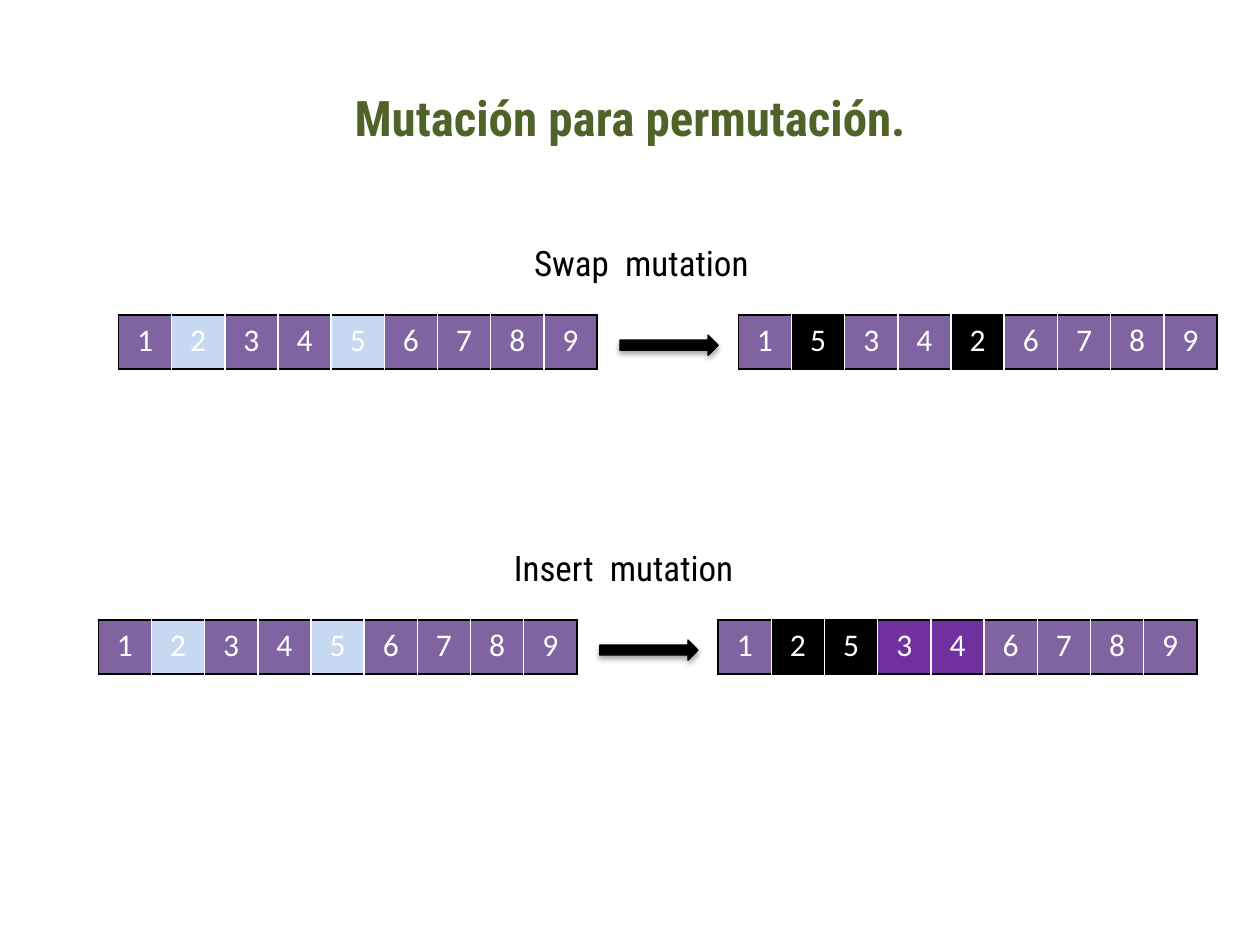
"""Build a slide showing swap and insert mutation of permutations."""
from dataclasses import dataclass

from lxml import etree
from pptx import Presentation
from pptx.dml.color import RGBColor
from pptx.enum.shapes import MSO_SHAPE
from pptx.enum.text import MSO_ANCHOR, MSO_AUTO_SIZE, PP_ALIGN
from pptx.oxml.ns import qn
from pptx.util import Inches, Pt

CENTER = PP_ALIGN.CENTER
MIDDLE = MSO_ANCHOR.MIDDLE
GROW = MSO_AUTO_SIZE.SHAPE_TO_FIT_TEXT
RIGHT_ARROW = MSO_SHAPE.RIGHT_ARROW
TITLE_ONLY = 5


@dataclass(frozen=True)
class Theme:
    heading_font: str = "Roboto Condensed"
    gene_font: str = "Calibri"
    title_size: float = 28
    label_size: float = 20
    gene_size: float = 18
    border_width: float = 1
    title: str = "4F6228"
    black: str = "000000"
    white: str = "FFFFFF"
    gene: str = "8064A2"
    selected: str = "C6D9F1"
    shifted: str = "7030A0"


@dataclass(frozen=True)
class Mutation:
    label: str
    left: float
    top: float
    result: str
    result_fills: dict[str, str]


THEME = Theme()
PARENT = "123456789"
PARENT_FILLS = dict.fromkeys("25", THEME.selected)
MOVED = dict.fromkeys("25", THEME.black)
MUTATIONS = [
    Mutation("Swap  mutation", 0.94, 2.5, "153426789", MOVED),
    Mutation("Insert  mutation", 0.78, 4.92, "125346789",
             MOVED | dict.fromkeys("34", THEME.shifted)),
]
TABLE_WIDTH, TABLE_HEIGHT = 3.8, 0.43
RESULT_OFFSET = 4.92
ARROW_OFFSET = (3.98, 0.16)
LABEL_OFFSET = (3.2, -0.63)


def style_text(p, font: str, size: float, color: str, bold: bool = False) -> None:
    for r in p.runs:
        r.font.name = font
        r.font.size = Pt(size)
        r.font.bold = bold
        r.font.color.rgb = RGBColor.from_string(color)


def add_color(parent, color: str):
    return etree.SubElement(parent, qn("a:srgbClr"), val=color)


def set_borders(cell, left: str, right: str) -> None:
    tc_pr = cell._tc.get_or_add_tcPr()
    sides = {"L": left, "R": right, "T": THEME.black, "B": THEME.black}
    for side, color in sides.items():
        ln = etree.SubElement(tc_pr, qn(f"a:ln{side}"), w=str(Pt(THEME.border_width)))
        add_color(etree.SubElement(ln, qn("a:solidFill")), color)


def add_chromosome(s, left: float, top: float, genes: str, fills: dict[str, str]) -> None:
    table = s.shapes.add_table(1, len(genes), Inches(left), Inches(top),
                               Inches(TABLE_WIDTH), Inches(TABLE_HEIGHT)).table
    last = len(genes) - 1
    for i, gene in enumerate(genes):
        table.columns[i].width = Inches(TABLE_WIDTH / len(genes))
        cell = table.cell(0, i)
        set_borders(cell, THEME.black if i == 0 else THEME.white,
                    THEME.black if i == last else THEME.white)
        cell.fill.solid()
        cell.fill.fore_color.rgb = RGBColor.from_string(fills.get(gene, THEME.gene))
        cell.text_frame.text = gene
        p = cell.text_frame.paragraphs[0]
        p.alignment = CENTER
        style_text(p, THEME.gene_font, THEME.gene_size, THEME.white)


def add_arrow(s, left: float, top: float) -> None:
    sp = s.shapes.add_shape(RIGHT_ARROW, Inches(left), Inches(top),
                            Inches(0.78), Inches(0.16))
    sp.fill.solid()
    sp.fill.fore_color.rgb = RGBColor.from_string(THEME.black)
    sp.line.color.rgb = RGBColor.from_string(THEME.black)
    sp.line.width = Pt(0.75)
    sp.shadow.inherit = False
    effects = sp._element.spPr.find(qn("a:effectLst"))
    shadow = etree.SubElement(effects, qn("a:outerShdw"), blurRad=str(Pt(3.1)),
                              dist=str(Pt(1.8)), dir="5400000", rotWithShape="0")
    etree.SubElement(add_color(shadow, THEME.black), qn("a:alpha"), val="35000")


def add_label(s, left: float, top: float, text: str) -> None:
    tf = s.shapes.add_textbox(Inches(left), Inches(top),
                              Inches(2.73), Inches(0.44)).text_frame
    tf.word_wrap = True
    tf.auto_size = GROW
    tf.text = text
    style_text(tf.paragraphs[0], THEME.heading_font, THEME.label_size, THEME.black)


def add_mutation(s, m: Mutation) -> None:
    add_chromosome(s, m.left, m.top, PARENT, PARENT_FILLS)
    add_arrow(s, m.left + ARROW_OFFSET[0], m.top + ARROW_OFFSET[1])
    add_chromosome(s, m.left + RESULT_OFFSET, m.top, m.result, m.result_fills)
    add_label(s, m.left + LABEL_OFFSET[0], m.top + LABEL_OFFSET[1], m.label)


def set_title(s, text: str) -> None:
    sp = s.shapes.title
    sp.left, sp.top, sp.width, sp.height = map(Inches, (0.5, 0.3, 9, 1.25))
    tf = sp.text_frame
    tf.text = text
    tf.vertical_anchor = MIDDLE
    p = tf.paragraphs[0]
    p.alignment = CENTER
    style_text(p, THEME.heading_font, THEME.title_size, THEME.title, bold=True)


def main() -> None:
    prs = Presentation()
    prs.slide_width, prs.slide_height = Inches(10), Inches(7.5)
    s = prs.slides.add_slide(prs.slide_layouts[TITLE_ONLY])
    set_title(s, "Mutación para permutación.")
    for m in MUTATIONS:
        add_mutation(s, m)
    prs.save("out.pptx")


if __name__ == "__main__":
    main()
